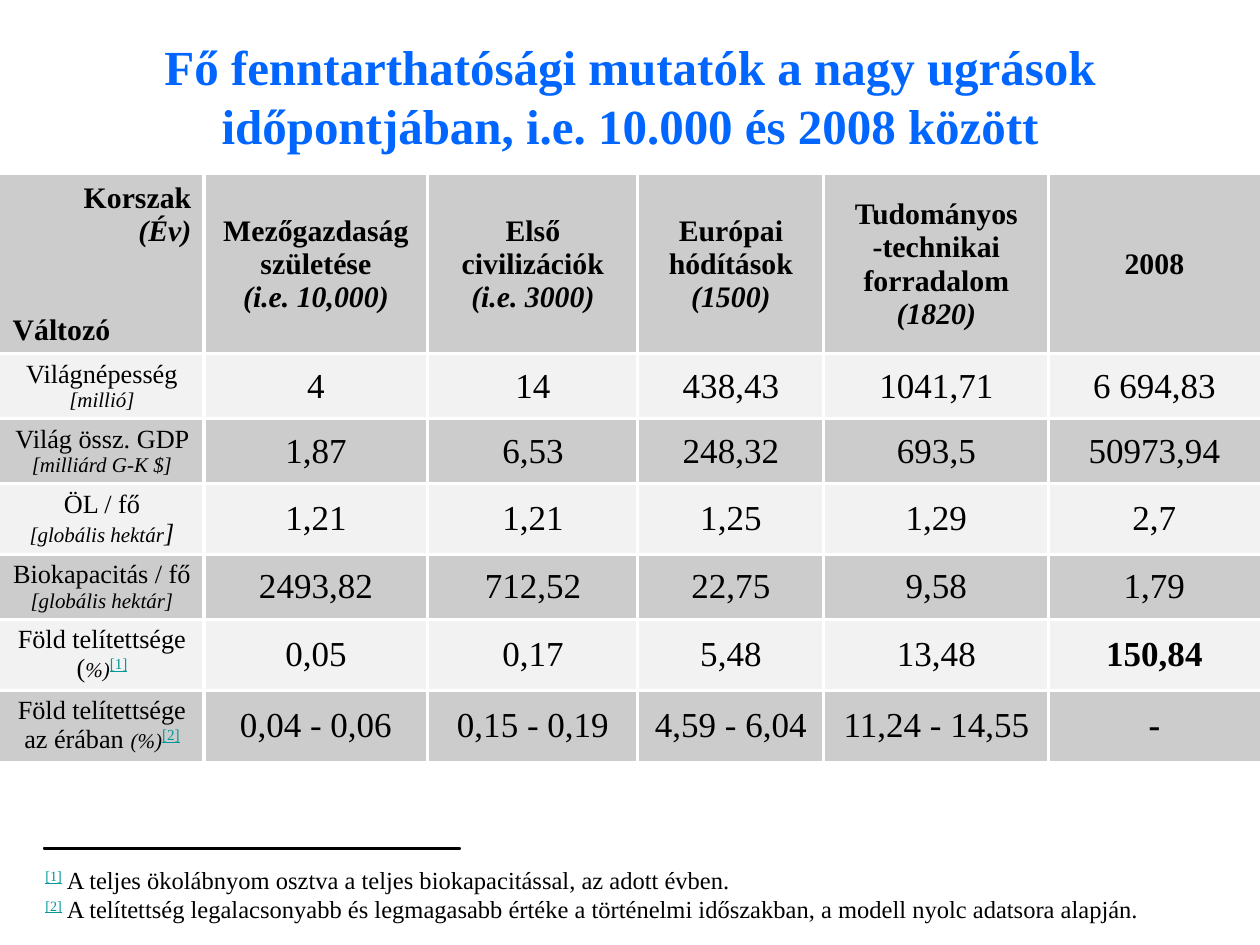
import pptx
import pptx.dml.color
import pptx.enum.shapes
import pptx.enum.text
import pptx.oxml
import pptx.oxml.ns
import pptx.util

RGB = pptx.dml.color.RGBColor
ALIGN = pptx.enum.text.PP_ALIGN
MIDDLE = pptx.enum.text.MSO_ANCHOR.MIDDLE
TOP = pptx.enum.text.MSO_ANCHOR.TOP

BLUE = RGB(0x00, 0x66, 0xFF)
TEAL = RGB(0x00, 0x99, 0x99)
BLACK = RGB(0, 0, 0)
WHITE = RGB(0xFF, 0xFF, 0xFF)
DARK = RGB(0xCC, 0xCC, 0xCC)
LIGHT = RGB(0xF2, 0xF2, 0xF2)

PX = 914400 / 126

# Point sizes and font values of each kind of run
FORMS = {
    "title": {"size": 28, "bold": True, "color": BLUE},
    "head": {"size": 17, "bold": True},
    "era": {"size": 17, "bold": True, "italic": True},
    "name": {"size": 15},
    "unit": {"size": 12, "italic": True},
    "tail": {"size": 15, "italic": True},
    "ref": {"size": 15, "underline": True, "color": TEAL, "raise": 30},
    "value": {"size": 20},
    "strong": {"size": 20, "bold": True},
    "note": {"size": 14},
    "mark": {"size": 14, "underline": True, "color": TEAL, "raise": 30},
}

COLS = [204, 224, 210, 186, 225, 211]
ROWS = [178, 65, 65, 70, 65, 71, 71]

ERAS = [
    ("Mezőgazdaság születése", "(i.e. 10,000)"),
    ("Első civilizációk", "(i.e. 3000)"),
    ("Európai hódítások", "(1500)"),
    ("Tudományos -technikai forradalom", "(1820)"),
    ("2008",),
]

# Each row: paragraphs of (text, form) runs, then its values
DATA = [
    ([[("Világnépesség ", "name"), ("[millió]", "unit")]],
     ["4", "14", "438,43", "1041,71", "6 694,83"]),
    ([[("Világ össz. GDP ", "name")], [("[milliárd G-K $]", "unit")]],
     ["1,87", "6,53", "248,32", "693,5", "50973,94"]),
    ([[("ÖL / fő", "name")], [("[globális hektár", "unit"), ("]", "tail")]],
     ["1,21", "1,21", "1,25", "1,29", "2,7"]),
    ([[("Biokapacitás / fő ", "name"), ("[globális hektár]", "unit")]],
     ["2493,82", "712,52", "22,75", "9,58", "1,79"]),
    ([[("Föld telítettsége (", "name"), ("%)", "unit"), ("[1]", "ref")]],
     ["0,05", "0,17", "5,48", "13,48", "150,84"]),
    ([[("Föld telítettsége az érában ", "name"), ("(%)", "unit"),
       ("[2]", "ref")]],
     ["0,04 - 0,06", "0,15 - 0,19", "4,59 - 6,04", "11,24 - 14,55", "-"]),
]
STRONG = {"150,84", "-"}

NOTES = [
    [("[1]", "mark"),
     (" A teljes ökolábnyom osztva a teljes biokapacitással, az adott évben.",
      "note")],
    [("[2]", "mark"),
     (" A telítettség legalacsonyabb és legmagasabb értéke a történelmi "
      "időszakban, a modell nyolc adatsora alapján.", "note")],
]


def emu(*px):
    return [pptx.util.Emu(round(n * PX)) for n in px]


class Page:
    """Holds the font and the current slide."""

    def __init__(self, slide, font):
        self.slide = slide
        self.font = font

    def paras(self, frame, lines, align=ALIGN.CENTER):
        for i, runs in enumerate(lines):
            para = frame.paragraphs[0] if i == 0 else frame.add_paragraph()
            para.alignment = align
            for text, form in runs:
                self.piece(para, text, form)

    def piece(self, para, text, form):
        run = para.add_run()
        run.text = text
        look = {"name": self.font, "bold": False, "italic": False,
                "color": BLACK, **FORMS[form]}
        look["size"] = pptx.util.Pt(look["size"])
        run.font.color.rgb = look.pop("color")
        lift = look.pop("raise", 0)
        if lift:
            run._r.get_or_add_rPr().set("baseline", str(lift * 1000))
        for key, value in look.items():
            setattr(run.font, key, value)

    def title(self, text, *box):
        shape = self.slide.shapes.title
        shape.left, shape.top, shape.width, shape.height = emu(*box)
        shape.text_frame.vertical_anchor = MIDDLE
        self.paras(shape.text_frame, [[(text, "title")]])

    def grid(self, x, y, cols, rows):
        shape = self.slide.shapes.add_table(
            len(rows), len(cols), *emu(x, y, sum(cols), sum(rows)))
        table = shape.table
        for col, width in zip(table.columns, emu(*cols)):
            col.width = width
        for row, height in zip(table.rows, emu(*rows)):
            row.height = height
        for r in range(len(rows)):
            for c in range(len(cols)):
                cell = table.cell(r, c)
                self.edge(cell, {"L": c > 0, "R": c < len(cols) - 1,
                                 "T": r > 0, "B": r < len(rows) - 1})
                cell.fill.solid()
                cell.fill.fore_color.rgb = LIGHT if r % 2 else DARK
                cell.vertical_anchor = MIDDLE if c or not r else TOP
        return table

    def edge(self, cell, sides):
        """Draw white lines on the inner sides and none on the outer ones."""
        props = cell._tc.get_or_add_tcPr()
        for side, inner in sides.items():
            fill = (f'<a:solidFill><a:srgbClr val="{WHITE}"/></a:solidFill>'
                    if inner else "<a:noFill/>")
            props.append(pptx.oxml.parse_xml(
                f'<a:ln{side} {pptx.oxml.ns.nsdecls("a")} '
                f'w="{int(pptx.util.Pt(2))}">{fill}</a:ln{side}>'))

    def rule(self, *box):
        shape = self.slide.shapes.add_shape(
            pptx.enum.shapes.MSO_SHAPE.RECTANGLE, *emu(*box))
        shape.shadow.inherit = False
        shape.fill.solid()
        shape.fill.fore_color.rgb = BLACK
        shape.line.color.rgb = BLACK
        shape.line.width = pptx.util.Pt(0.75)

    def text(self, lines, *box):
        frame = self.slide.shapes.add_textbox(*emu(*box)).text_frame
        frame.word_wrap = False
        frame.auto_size = pptx.enum.text.MSO_AUTO_SIZE.SHAPE_TO_FIT_TEXT
        frame.vertical_anchor = MIDDLE
        self.paras(frame, lines, ALIGN.JUSTIFY)


def fill_in(page, table):
    corner = table.cell(0, 0).text_frame
    page.paras(corner, [[("Korszak", "head")], [("(Év)", "era")],
                        [("Változó", "head")]], ALIGN.RIGHT)
    last = corner.paragraphs[-1]
    last.alignment = ALIGN.LEFT
    last.space_before = pptx.util.Pt(38)
    for c, era in enumerate(ERAS, 1):
        page.paras(table.cell(0, c).text_frame,
                   [[(text, form)] for text, form in zip(era, ("head", "era"))])
    for r, (label, values) in enumerate(DATA, 1):
        page.paras(table.cell(r, 0).text_frame, label)
        for c, value in enumerate(values, 1):
            form = "strong" if value in STRONG else "value"
            page.paras(table.cell(r, c).text_frame, [[(value, form)]])


def main():
    deck = pptx.Presentation()
    deck.slide_width, deck.slide_height = emu(1260, 945)
    page = Page(deck.slides.add_slide(deck.slide_layouts[5]),
                "Times New Roman")
    page.title("Fő fenntarthatósági mutatók a nagy ugrások időpontjában, "
               "i.e. 10.000 és 2008 között", 63, 16, 1134, 158)
    fill_in(page, page.grid(0, 175, COLS, ROWS))
    page.rule(44, 848, 416, 1)
    page.text(NOTES, 33, 858, 1123, 72)
    deck.save("out.pptx")


if __name__ == "__main__":
    main()
